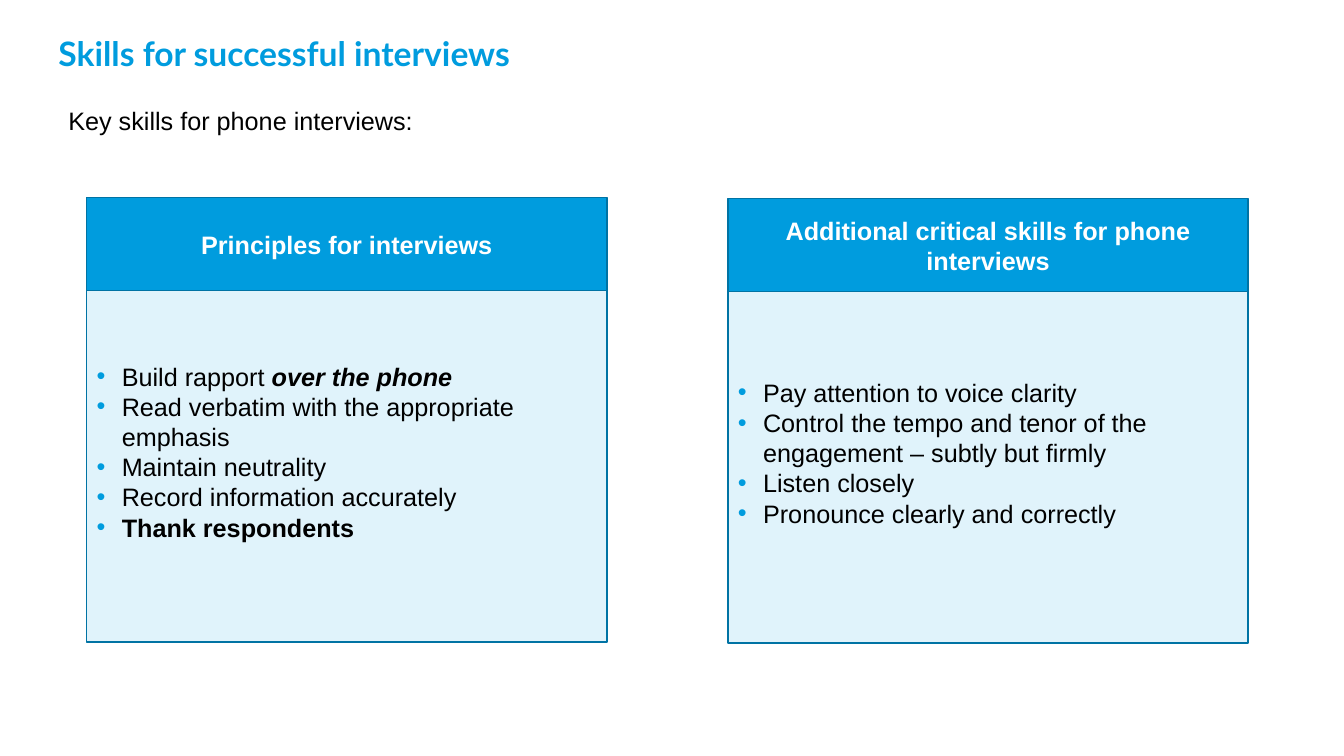
from lxml import etree
from pptx import Presentation
from pptx.dml.color import RGBColor
from pptx.enum.shapes import MSO_SHAPE
from pptx.enum.text import MSO_ANCHOR, PP_ALIGN
from pptx.oxml.ns import qn
from pptx.util import Inches, Pt

RECTANGLE = MSO_SHAPE.RECTANGLE
MIDDLE, BOTTOM = MSO_ANCHOR.MIDDLE, MSO_ANCHOR.BOTTOM
LEFT, CENTER = PP_ALIGN.LEFT, PP_ALIGN.CENTER

COLORS = {"blue": "009CDE", "edge": "0073A4", "pale": "E0F3FB",
          "white": "FFFFFF", "black": "000000"}

# Each card: left, top, heading, bullets as lists of (text, bold, italic)
CARDS = [
    (0.86, 1.96, "Principles for interviews", [
        [("Build rapport ", False, False), ("over the phone", True, True)],
        [("Read verbatim with the appropriate emphasis", False, False)],
        [("Maintain neutrality", False, False)],
        [("Record information accurately", False, False)],
        [("Thank respondents", True, False)],
    ]),
    (7.22, 1.97, "Additional critical skills for phone interviews", [
        [("Pay attention to voice clarity", False, False)],
        [("Control the tempo and tenor of the engagement – subtly but firmly",
          False, False)],
        [("Listen closely", False, False)],
        [("Pronounce clearly and correctly", False, False)],
    ]),
]
CARD_WIDTH, HEADING_HEIGHT, BODY_OFFSET, BODY_HEIGHT = 5.16, 0.93, 0.92, 3.49


def style(run, color, size=18, name="Arial", bold=False, italic=False):
    run.font.name = name
    run.font.size = Pt(size)
    run.font.bold = bold
    run.font.italic = italic
    run.font.color.rgb = RGBColor.from_string(COLORS[color])


def add_panel(left, top, height, fill):
    panel = slide.shapes.add_shape(RECTANGLE, Inches(left), Inches(top),
                                   Inches(CARD_WIDTH), Inches(height))
    panel.shadow.inherit = False
    panel.fill.solid()
    panel.fill.fore_color.rgb = RGBColor.from_string(COLORS[fill])
    panel.line.color.rgb = RGBColor.from_string(COLORS["edge"])
    panel.line.width = Pt(1)
    panel.text_frame.word_wrap = True
    panel.text_frame.vertical_anchor = MIDDLE
    return panel.text_frame


prs = Presentation()
prs.slide_width, prs.slide_height = Inches(13.33), Inches(7.5)
slide = prs.slides.add_slide(prs.slide_layouts[6])

# Title
title = slide.shapes.add_textbox(Inches(0.56), Inches(0.35),
                                 Inches(8.92), Inches(0.38)).text_frame
title.word_wrap = True
title.vertical_anchor = BOTTOM
title.margin_left, title.margin_right = Inches(0.02), Inches(0.39)
title.margin_top = title.margin_bottom = 0
title.text = "Skills for successful interviews"
title.paragraphs[0].line_spacing = 0.9
style(title.paragraphs[0].runs[0], "blue", size=24, name="Lato", bold=True)

# Cards
for left, top, heading_text, bullets in CARDS:
    heading = add_panel(left, top, HEADING_HEIGHT, "blue")
    heading.text = heading_text
    heading.paragraphs[0].alignment = CENTER
    style(heading.paragraphs[0].runs[0], "white", bold=True)

    body = add_panel(left, top + BODY_OFFSET, BODY_HEIGHT, "pale")
    body.margin_bottom = Inches(0.34)  # lifts the list above the middle
    for index, pieces in enumerate(bullets):
        bullet = body.add_paragraph() if index else body.paragraphs[0]
        bullet.alignment = LEFT
        props = bullet._p.get_or_add_pPr()
        props.set("marL", str(Inches(0.25)))
        props.set("indent", str(-Inches(0.25)))
        bullet_color = etree.SubElement(props, qn("a:buClr"))
        etree.SubElement(bullet_color, qn("a:srgbClr"), val=COLORS["blue"])
        etree.SubElement(props, qn("a:buFont"), typeface="Arial")
        etree.SubElement(props, qn("a:buChar"), char="•")
        for text, bold, italic in pieces:
            run = bullet.add_run()
            run.text = text
            style(run, "black", bold=bold, italic=italic)

# Introductory line
intro = slide.shapes.add_textbox(Inches(0.58), Inches(1),
                                 Inches(5.07), Inches(0.4)).text_frame
intro.word_wrap = True
intro.text = "Key skills for phone interviews:"
style(intro.paragraphs[0].runs[0], "black")

prs.save("out.pptx")
